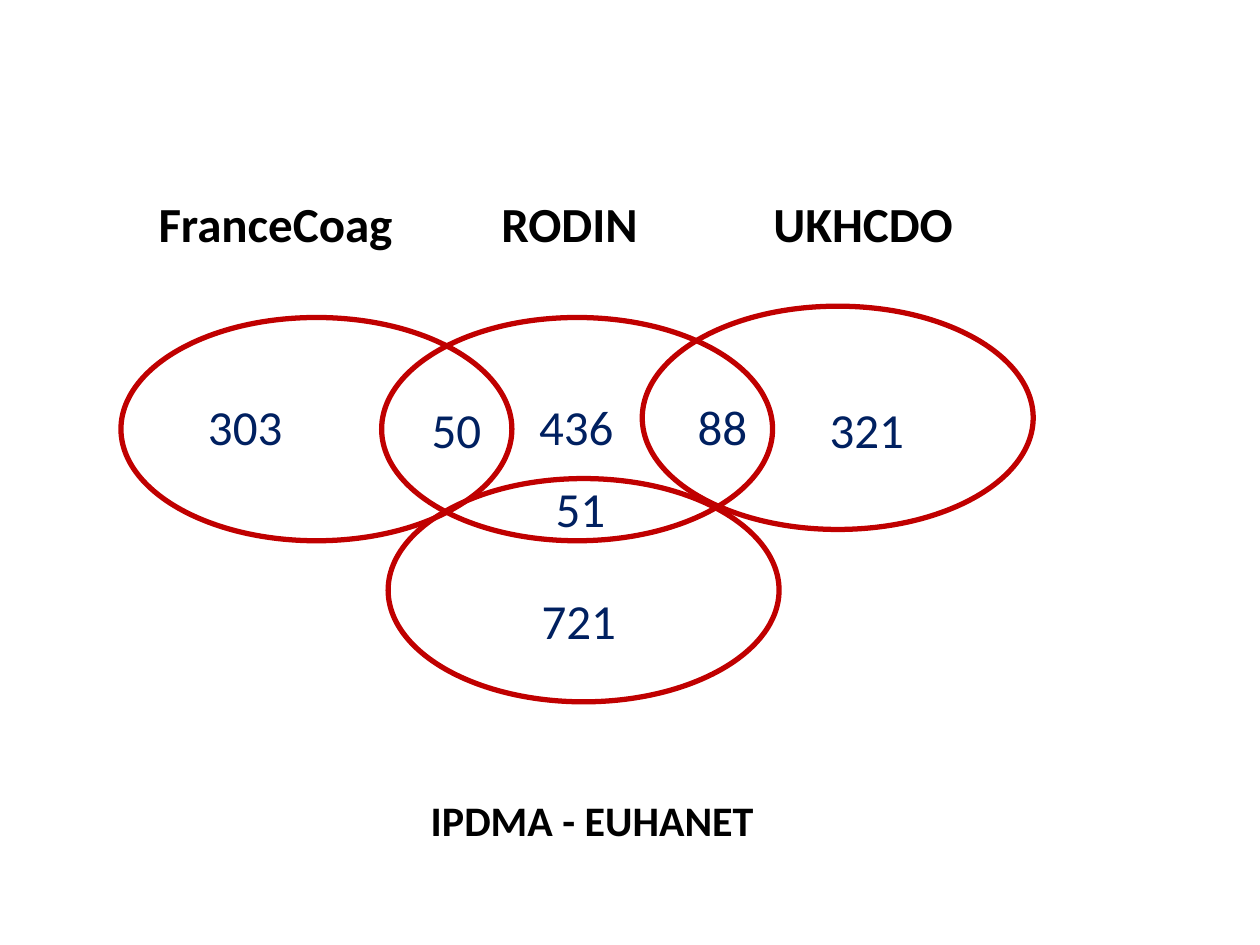
import pptx
import pptx.dml.color
import pptx.enum.shapes
import pptx.enum.text
import pptx.oxml.ns
import pptx.util
from lxml import etree

Inches = pptx.util.Inches
FONT = "Calibri"
RED, NAVY, BLACK = "C00000", "002060", "000000"

# Venn grid: columns and rows of the diagram's box
GRID = 7
OVAL_COLUMNS, OVAL_ROWS = 3, 3.95
OVALS = [(0, 0.2), (2, 0.2), (4, 0), (2.05, 3.05)]
COUNTS = [  # text, centre column, centre row
    ("303", 0.96, 2.13), ("50", 2.58, 2.17), ("436", 3.5, 2.13),
    ("88", 4.62, 2.13), ("321", 5.73, 2.17),
    ("51", 3.53, 3.58), ("721", 3.52, 5.56),
]


def color(value):
    return pptx.dml.color.RGBColor.from_string(value)


def add_text(slide, box, text, size, text_color, bold=False, wrap=False):
    shape = slide.shapes.add_textbox(*(Inches(length) for length in box))
    text_frame = shape.text_frame
    text_frame.word_wrap = wrap
    text_frame.auto_size = pptx.enum.text.MSO_AUTO_SIZE.SHAPE_TO_FIT_TEXT
    text_frame.text = text
    font = text_frame.paragraphs[0].runs[0].font
    font.name, font.size, font.bold = FONT, pptx.util.Pt(size), bold
    font.color.rgb = color(text_color)
    return shape


def add_headings(slide, box, names, tab_stops):
    """Place the names on one line, at tab stops measured in inches."""
    shape = add_text(slide, box, "\t".join(names), 28, BLACK, bold=True, wrap=True)
    properties = shape.text_frame.paragraphs[0]._p.get_or_add_pPr()
    tab_list = etree.SubElement(properties, pptx.oxml.ns.qn("a:tabLst"))
    for stop in tab_stops:
        etree.SubElement(tab_list, pptx.oxml.ns.qn("a:tab"),
                         pos=str(Inches(stop)), algn="l")


def add_venn(slide, box):
    left, top, width, height = box
    column, row = width / GRID, height / GRID
    for x, y in OVALS:
        oval = slide.shapes.add_shape(
            pptx.enum.shapes.MSO_SHAPE.OVAL,
            Inches(left + x * column), Inches(top + y * row),
            Inches(OVAL_COLUMNS * column), Inches(OVAL_ROWS * row))
        oval.shadow.inherit = False
        oval.fill.background()
        oval.line.color.rgb = color(RED)
        oval.line.width = pptx.util.Pt(3)
    for text, x, y in COUNTS:
        text_width, text_height = 0.2 + 0.2 * len(text), 0.57
        add_text(slide, (left + x * column - text_width / 2,
                         top + y * row - text_height / 2,
                         text_width, text_height), text, 28, NAVY)


def main():
    presentation = pptx.Presentation()
    presentation.slide_width, presentation.slide_height = Inches(10), Inches(7.5)
    slide = presentation.slides.add_slide(presentation.slide_layouts[6])
    add_venn(slide, (0.96, 2.43, 7.24, 3.14))
    add_headings(slide, (1.16, 1.49, 6.55, 0.57),
                 ("FranceCoag", "RODIN", "UKHCDO"), (2.72, 4.88))
    add_text(slide, (3.32, 6.26, 2.79, 0.5), "IPDMA - EUHANET", 24, BLACK, bold=True)
    presentation.save("out.pptx")


if __name__ == "__main__":
    main()
